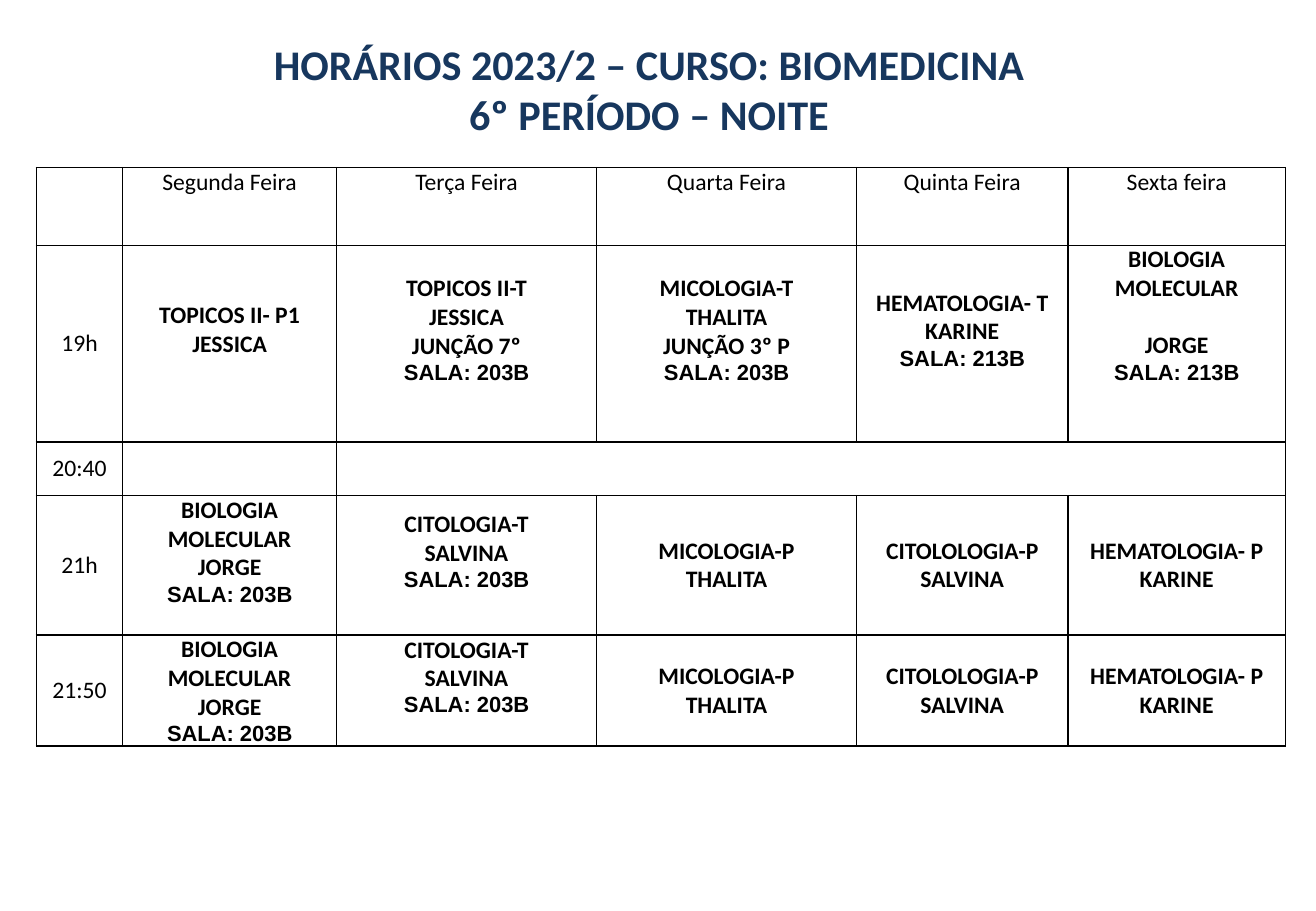
from lxml.etree import SubElement
from pptx import Presentation
from pptx.dml.color import RGBColor
from pptx.enum.text import MSO_ANCHOR, PP_ALIGN
from pptx.oxml.ns import qn
from pptx.util import Inches, Pt

NAVY = RGBColor(0x17, 0x37, 0x5E)
BLACK = RGBColor(0, 0, 0)
WHITE = RGBColor(255, 255, 255)

# Content: one text line per paragraph
TITLE = "HORÁRIOS 2023/2 – CURSO: BIOMEDICINA\n6º PERÍODO – NOITE"
BIOLOGIA = "BIOLOGIA MOLECULAR\nJORGE\nSALA: 203B"
CITOLOGIA_T = "CITOLOGIA-T\nSALVINA\nSALA: 203B"
PRATICAS = ["MICOLOGIA-P\nTHALITA", "CITOLOLOGIA-P\nSALVINA",
            "HEMATOLOGIA- P\nKARINE"]
SCHEDULE = [
    ["", "Segunda Feira", "Terça Feira", "Quarta Feira", "Quinta Feira",
     "Sexta feira"],
    ["19h", "TOPICOS II- P1\nJESSICA",
     "TOPICOS II-T\nJESSICA\nJUNÇÃO 7º\nSALA: 203B",
     "MICOLOGIA-T\nTHALITA\nJUNÇÃO 3º P\nSALA: 203B",
     "HEMATOLOGIA- T\nKARINE\nSALA: 213B",
     "BIOLOGIA MOLECULAR\nJORGE\nSALA: 213B"],
    ["20:40", "", "", "", "", ""],
    ["21h", BIOLOGIA, CITOLOGIA_T, *PRATICAS],
    ["21:50", BIOLOGIA, CITOLOGIA_T, *PRATICAS],
]
COL_WIDTHS = [0.71, 1.76, 2.14, 2.14, 1.74, 1.79]
ROW_HEIGHTS = [0.64, 1.62, 0.44, 1.15, 0.91]
FRIDAY_BIOLOGIA = (1, 5)
# Cells whose text sits above the middle
RAISED = {(1, 1), (1, 2), (1, 3), (1, 4), (3, 1), (3, 2), (4, 2)}


def add_borders(cell):
    tc_pr = cell._tc.get_or_add_tcPr()
    for side in ("lnL", "lnR", "lnT", "lnB"):
        ln = SubElement(tc_pr, qn(f"a:{side}"), w=str(Pt(1)))
        fill = SubElement(ln, qn("a:solidFill"))
        SubElement(fill, qn("a:srgbClr"), val=str(BLACK))


def format_cell(cell, row, col, text):
    add_borders(cell)
    cell.fill.solid()
    cell.fill.fore_color.rgb = WHITE
    cell.margin_left = cell.margin_right = Inches(0.05)
    cell.margin_top = 0
    cell.margin_bottom = Inches(0.23 if (row, col) in RAISED else 0)
    at_top = row == 0 or (row, col) == FRIDAY_BIOLOGIA
    cell.vertical_anchor = MSO_ANCHOR.TOP if at_top else MSO_ANCHOR.MIDDLE
    cell.text_frame.text = text
    for p in cell.text_frame.paragraphs:
        p.alignment = PP_ALIGN.CENTER
        if (row, col) == FRIDAY_BIOLOGIA and p.text == "JORGE":
            p.space_before = Pt(17)
        is_room = p.text.startswith("SALA")
        for r in p.runs:
            r.font.name = "Arial" if is_room else "Calibri"
            r.font.size = Pt(13 if is_room else 14)
            r.font.bold = row > 0 and col > 0
            r.font.color.rgb = BLACK


prs = Presentation()
prs.slide_width, prs.slide_height = Inches(10.83), Inches(7.5)
s = prs.slides.add_slide(prs.slide_layouts[5])

# Title
title = s.shapes.title
title.left, title.top = Inches(0.3), Inches(0.26)
title.width, title.height = Inches(10.08), Inches(0.94)
tf = title.text_frame
tf.text = TITLE
tf.vertical_anchor = MSO_ANCHOR.MIDDLE
for p in tf.paragraphs:
    p.alignment = PP_ALIGN.CENTER
    p.space_before = Pt(0)
    for r in p.runs:
        r.font.name = "Calibri"
        r.font.size = Pt(25)
        r.font.bold = True
        r.font.color.rgb = NAVY

# Timetable
table = s.shapes.add_table(
    len(ROW_HEIGHTS), len(COL_WIDTHS), Inches(0.3), Inches(1.38),
    Inches(sum(COL_WIDTHS)), Inches(sum(ROW_HEIGHTS))).table
table.first_row = table.horz_banding = False
for column, width in zip(table.columns, COL_WIDTHS):
    column.width = Inches(width)
for table_row, height in zip(table.rows, ROW_HEIGHTS):
    table_row.height = Inches(height)
for row, texts in enumerate(SCHEDULE):
    for col, text in enumerate(texts):
        format_cell(table.cell(row, col), row, col, text)

# The break runs from Tuesday to Friday
table.cell(2, 2).merge(table.cell(2, 5))

prs.save("out.pptx")
